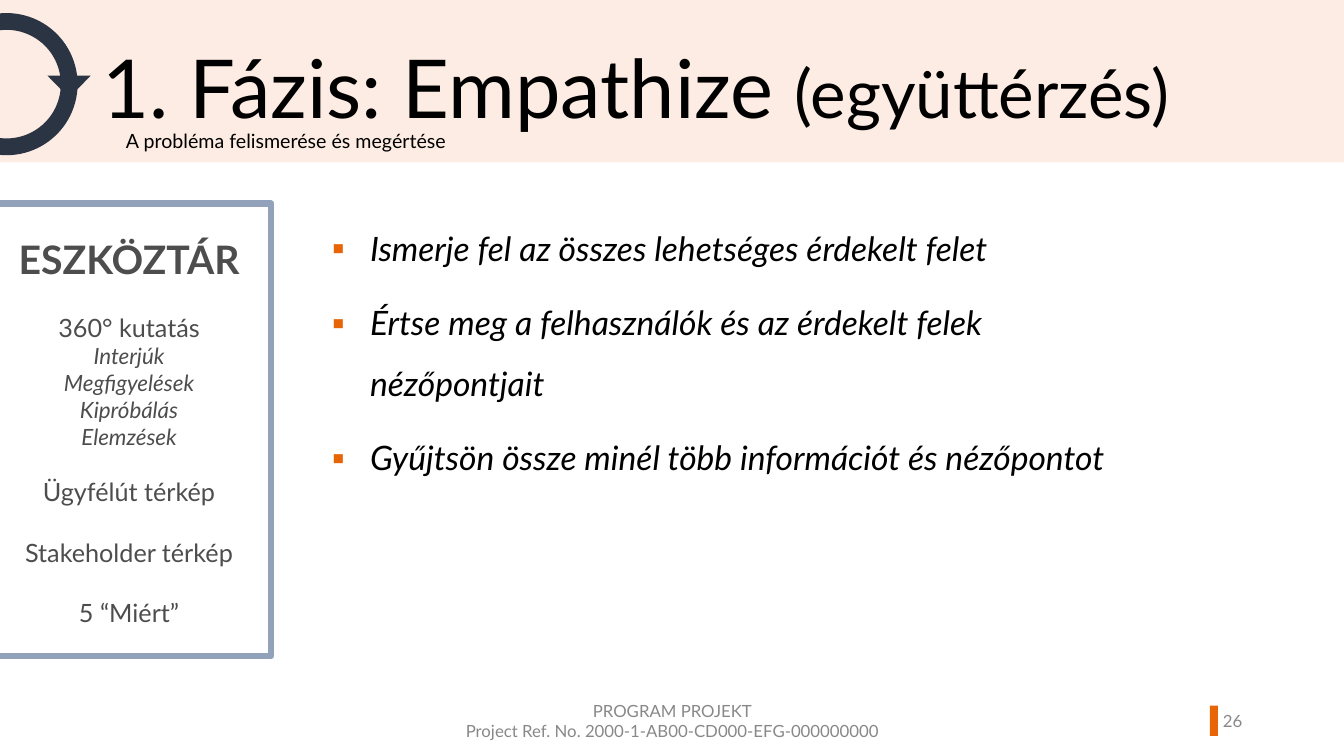
from lxml import etree
from pptx import Presentation
from pptx.dml.color import RGBColor
from pptx.enum.shapes import MSO_SHAPE
from pptx.enum.text import MSO_ANCHOR, MSO_AUTO_SIZE, PP_ALIGN
from pptx.oxml.ns import qn
from pptx.util import Inches, Pt

RECTANGLE, DONUT, TRIANGLE = MSO_SHAPE.RECTANGLE, MSO_SHAPE.DONUT, MSO_SHAPE.ISOSCELES_TRIANGLE
LEFT, CENTER, RIGHT = PP_ALIGN.LEFT, PP_ALIGN.CENTER, PP_ALIGN.RIGHT
TOP, MIDDLE = MSO_ANCHOR.TOP, MSO_ANCHOR.MIDDLE
NO_FIT = MSO_AUTO_SIZE.NONE

FONT = "Lato"
COLORS = {
    "band": "FDECE3",
    "accent": "E86507",
    "arrow": "2A3443",
    "frame": "92A2BA",
    "white": "FFFFFF",
    "text": "000000",
    "tools": "4D4D4D",
    "footer": "888888",
}

TITLE_SPANS = [("1. Fázis: Empathize", 58), (" ", 60), ("(együttérzés)", 48)]
GOALS = [
    "Ismerje fel az összes lehetséges érdekelt felet",
    "Értse meg a felhasználók és az érdekelt felek nézőpontjait",
    "Gyűjtsön össze minél több információt és nézőpontot",
]
# text, size, bold, italic, space before in points
TOOLS = [
    ("ESZKÖZTÁR", 28, True, False, 0),
    ("360° kutatás", 18, False, False, 21.6),
    ("Interjúk", 16, False, True, 0),
    ("Megfigyelések", 16, False, True, 0),
    ("Kipróbálás", 16, False, True, 0),
    ("Elemzések", 16, False, True, 0),
    ("Ügyfélút térkép", 18, False, False, 19.2),
    ("Stakeholder térkép", 18, False, False, 21.6),
    ("5 “Miért”", 18, False, False, 21.6),
]


def rgb(name):
    return RGBColor.from_string(COLORS[name])


class SlideBuilder:
    def __init__(self, deck):
        self.page = deck.slides.add_slide(deck.slide_layouts[1])
        self.shapes = self.page.shapes

    def place(self, box, at):
        box.left, box.top, box.width, box.height = map(Inches, at)

    def style(self, span, size, color, bold=False, italic=False):
        font = span.font
        font.name, font.size = FONT, Pt(size)
        font.bold, font.italic = bold, italic
        font.color.rgb = rgb(color)

    def frame(self, box, anchor=TOP, top_inset=0.05):
        frame = box.text_frame
        frame.word_wrap = True
        frame.auto_size = NO_FIT
        frame.vertical_anchor = anchor
        frame.margin_left = frame.margin_right = Inches(0.1)
        frame.margin_top, frame.margin_bottom = Inches(top_inset), Inches(0.05)
        return frame

    def shape(self, kind, at, fill, line=None, parent=None):
        box = (parent or self.shapes).add_shape(kind, *map(Inches, at))
        box.shadow.inherit = False
        box.fill.solid()
        box.fill.fore_color.rgb = rgb(fill)
        if line:
            box.line.color.rgb = rgb(line)
            box.line.width = Pt(4.5)
        else:
            box.line.fill.background()
        return box

    def backdrop(self, at, fill):
        """Draw a rectangle behind the placeholders."""
        box = self.shape(RECTANGLE, at, fill)
        self.shapes.title.element.addprevious(box.element)

    def title(self, at, spans):
        box = self.shapes.title
        self.place(box, at)
        para = self.frame(box).paragraphs[0]
        para.alignment, para.line_spacing = LEFT, 0.9
        for text, size in spans:
            span = para.add_run()
            span.text = text
            self.style(span, size, "text")

    def bullets(self, at, items):
        box = self.page.placeholders[1]
        self.place(box, at)
        frame = self.frame(box)
        frame.text = "\n".join(items)
        for index, para in enumerate(frame.paragraphs):
            para.alignment, para.line_spacing = LEFT, 1.5
            para.space_before = Pt(10 if index else 0)
            self.style(para.runs[0], 24, "text", italic=True)
            self.square_bullet(para)

    def square_bullet(self, para):
        props = para._p.get_or_add_pPr()
        props.set("marL", str(Inches(0.38)))
        props.set("indent", str(-Inches(0.38)))
        color = etree.SubElement(props, qn("a:buClr"))
        etree.SubElement(color, qn("a:srgbClr"), val=COLORS["accent"])
        etree.SubElement(props, qn("a:buFont"), typeface=FONT)
        etree.SubElement(props, qn("a:buChar"), char="▪")

    def label(self, at, text, size, color, align=LEFT, anchor=TOP):
        box = self.shapes.add_textbox(*map(Inches, at))
        para = self.frame(box, anchor).paragraphs[0]
        para.text = text
        para.alignment = align
        for span in para.runs:
            self.style(span, size, color)

    def round_arrow(self):
        group = self.shapes.add_group_shape()
        ring = self.shape(DONUT, (-0.64, 0.13, 1.41, 1.41), "arrow", parent=group.shapes)
        ring.adjustments[0] = 0.118
        tip = self.shape(TRIANGLE, (0.47, 0.75, 0.43, 0.22), "arrow", parent=group.shapes)
        tip.rotation = 180

    def toolbox(self, at, tools):
        box = self.shape(RECTANGLE, at, "white", line="frame")
        frame = self.frame(box, top_inset=0.31)
        frame.text = "\n".join(tool[0] for tool in tools)
        for para, (_, size, bold, italic, gap) in zip(frame.paragraphs, tools):
            para.alignment = CENTER
            para.space_before = Pt(gap)
            self.style(para.runs[0], size, "tools", bold, italic)


def main():
    deck = Presentation()
    deck.slide_width, deck.slide_height = Inches(13.33), Inches(7.5)
    builder = SlideBuilder(deck)
    builder.backdrop((0, 0, 13.33, 1.61), "band")
    builder.backdrop((12, 7, 0.08, 0.3), "accent")
    builder.title((0.92, 0.41, 11.2, 0.85), TITLE_SPANS)
    builder.bullets((3.19, 2.01, 8.01, 3.47), GOALS)
    builder.round_arrow()
    builder.label((1.15, 1.23, 3.88, 0.34), "A probléma felismerése és megértése", 14, "text")
    builder.toolbox((-0.13, 2.02, 2.82, 4.49), TOOLS)
    builder.label((4.42, 6.95, 4.5, 0.4),
                  "PROGRAM PROJEKT\vProject Ref. No. 2000-1-AB00-CD000-EFG-000000000",
                  12, "footer", CENTER, MIDDLE)
    builder.label((11.77, 6.95, 0.65, 0.4), "26", 12, "footer", RIGHT, MIDDLE)
    deck.save("out.pptx")


if __name__ == "__main__":
    main()
